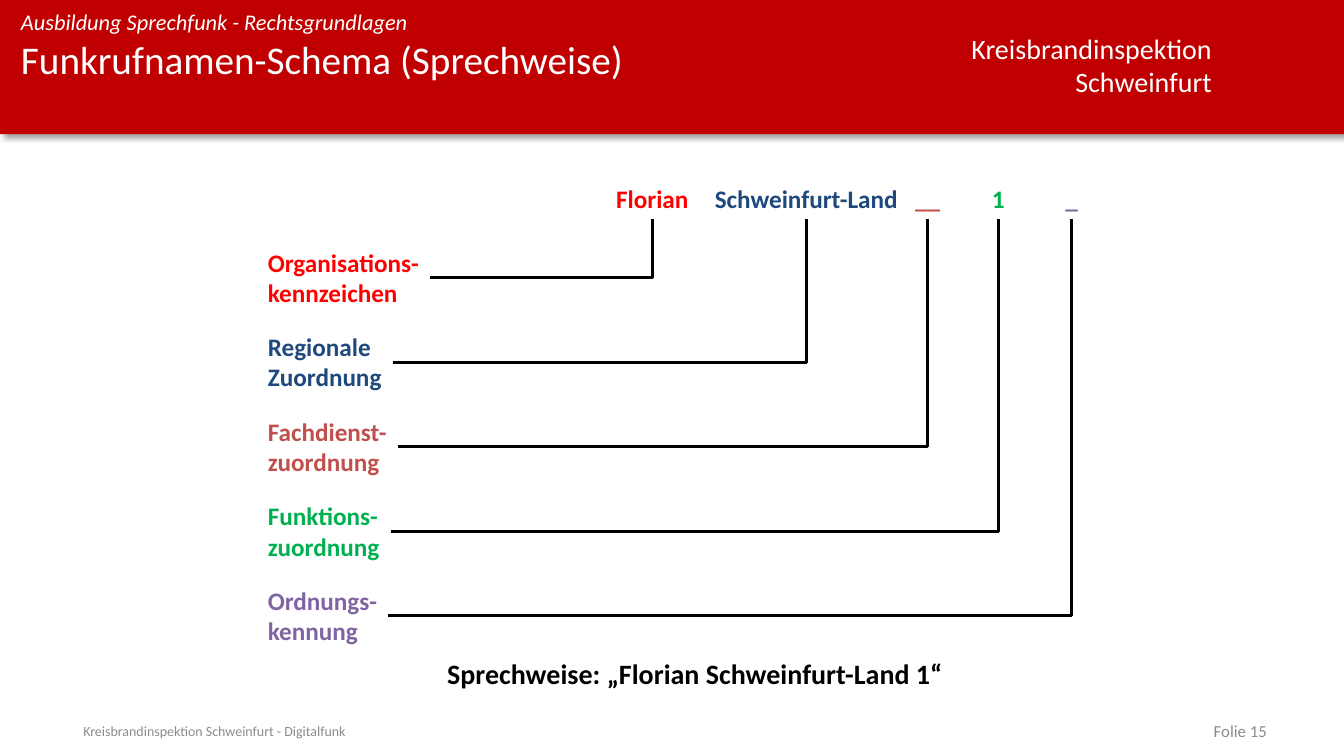
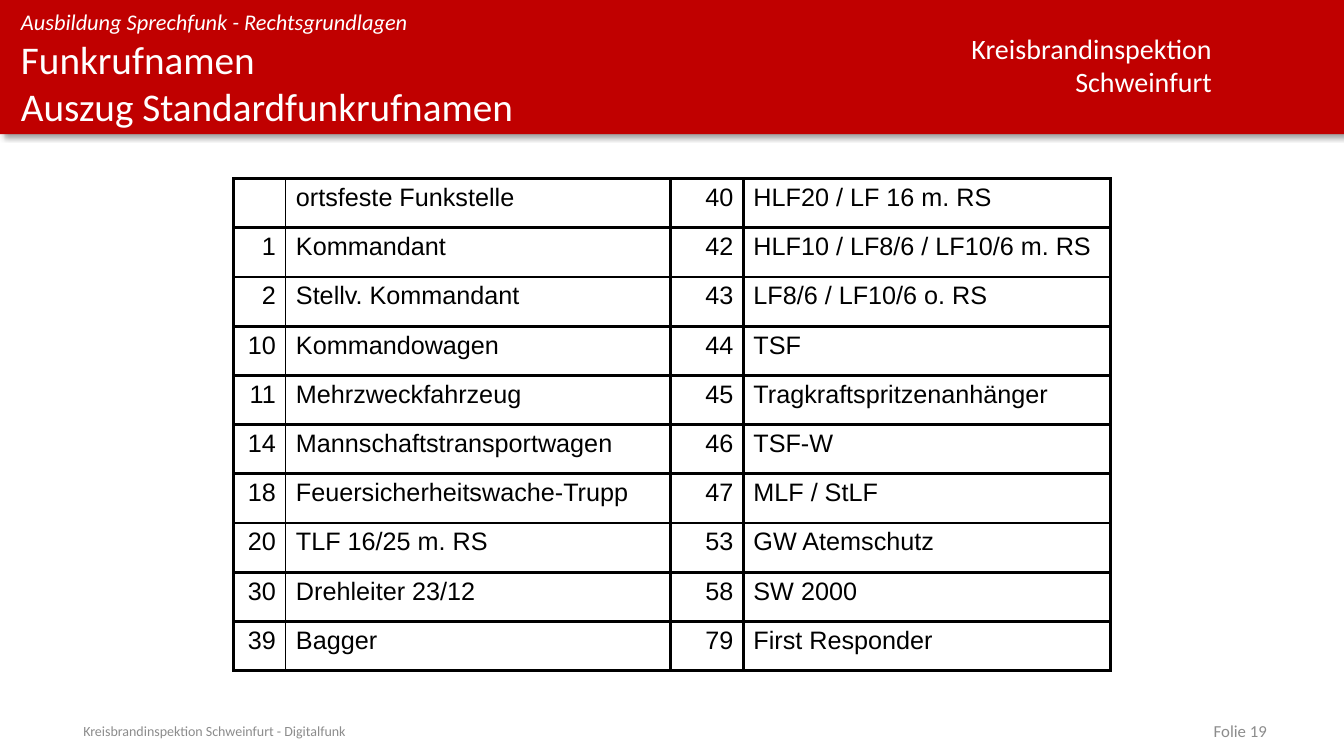
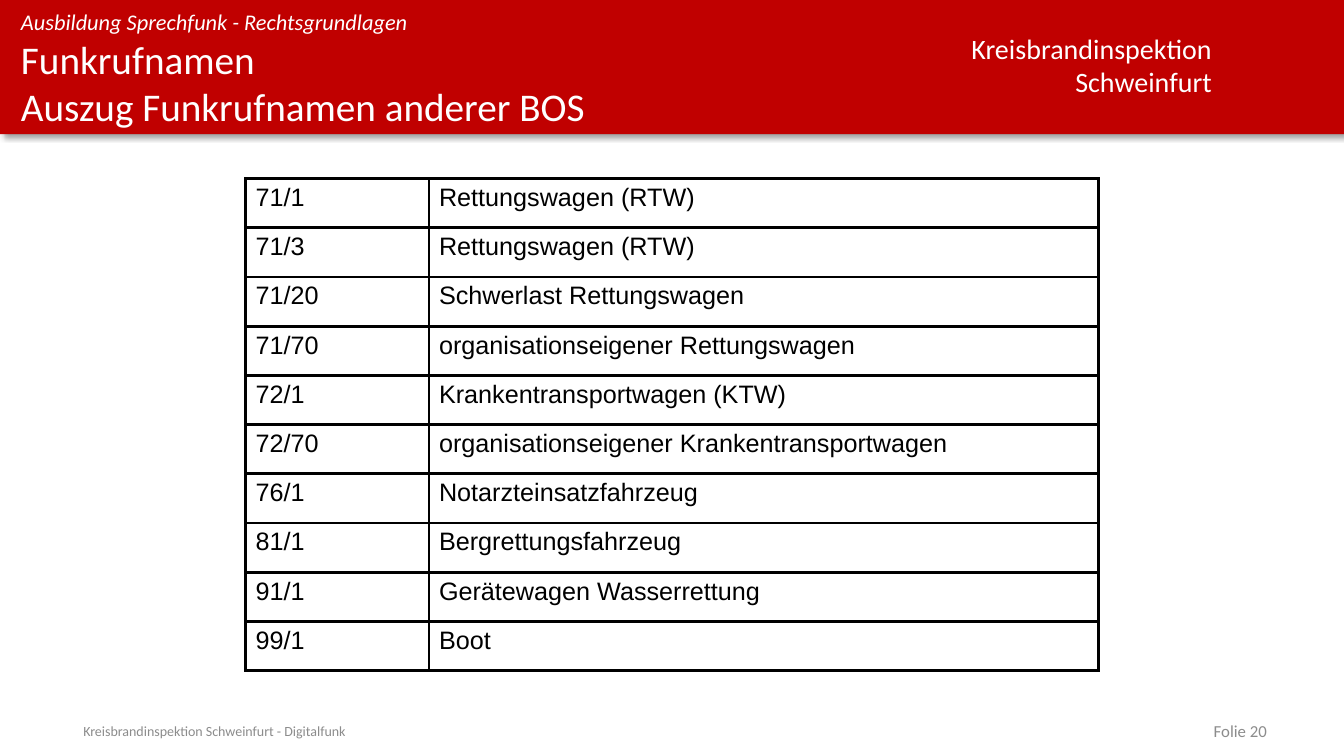
from dataclasses import dataclass

from lxml.etree import SubElement as Sub
from pptx import Presentation
from pptx.dml.color import RGBColor as RGB
from pptx.enum.shapes import MSO_CONNECTOR as Link, MSO_SHAPE as Form
from pptx.enum.text import MSO_ANCHOR as Anchor, MSO_AUTO_SIZE as Fit, PP_ALIGN as Align
from pptx.oxml.ns import qn
from pptx.util import Cm, Pt

RED = RGB(0xC0, 0x00, 0x00)
WHITE = RGB(0xFF, 0xFF, 0xFF)
BLACK = RGB(0x00, 0x00, 0x00)
GREY = RGB(0x8C, 0x8C, 0x8C)
FIRE = RGB(0xFF, 0x00, 0x00)
NAVY = RGB(0x1F, 0x49, 0x7D)
BRICK = RGB(0xC0, 0x50, 0x4D)
GREEN = RGB(0x00, 0xB0, 0x50)
PLUM = RGB(0x80, 0x64, 0xA2)

WIDE, HIGH = 33.87, 19.05
ROW = 1.24
THICK, THIN = 2.25, 1


@dataclass(frozen=True)
class Style:
    size: float
    color: RGB = BLACK
    bold: bool = False
    slant: bool = False
    face: str = "Calibri"
    align: Align = Align.LEFT


@dataclass(frozen=True)
class Box:
    left: float
    top: float
    width: float
    height: float
    wrap: bool = True
    grow: bool = False
    inset: bool = True
    anchor: Anchor = Anchor.TOP


@dataclass(frozen=True)
class Part:
    name: str
    left: float
    width: float
    label: tuple[str, ...]
    room: float
    color: RGB


@dataclass(frozen=True)
class Col:
    width: float
    align: Align = Align.LEFT
    edge: float = THICK


PARTS = [
    Part("Florian", 15.27, 2.34, ("Organisations-", "kennzeichen"), 4.34, FIRE),
    Part("Schweinfurt-Land", 17.73, 5.18, ("Regionale", "Zuordnung"), 3.4, NAVY),
    Part("__", 22.81, 1.14, ("Fachdienst-", "zuordnung"), 3.53, BRICK),
    Part("1", 24.74, 0.84, ("Funktions-", "zuordnung"), 3.35, GREEN),
    Part("_", 26.59, 0.84, ("Ordnungs-", "kennung"), 3.28, PLUM),
]

UNITS = [
    ("", "ortsfeste Funkstelle", "40", "HLF20 / LF 16 m. RS"),
    ("1", "Kommandant", "42", "HLF10 / LF8/6 / LF10/6 m. RS"),
    ("2", "Stellv. Kommandant", "43", "LF8/6 / LF10/6 o. RS"),
    ("10", "Kommandowagen", "44", "TSF"),
    ("11", "Mehrzweckfahrzeug", "45", "Tragkraftspritzenanhänger"),
    ("14", "Mannschaftstransportwagen", "46", "TSF-W"),
    ("18", "Feuersicherheitswache-Trupp", "47", "MLF / StLF"),
    ("20", "TLF 16/25 m. RS", "53", "GW Atemschutz"),
    ("30", "Drehleiter 23/12", "58", "SW 2000"),
    ("39", "Bagger", "79", "First Responder"),
]
UNIT_COLS = [Col(1.32, Align.RIGHT, THIN), Col(9.7), Col(1.83, Align.RIGHT), Col(9.25)]

OTHERS = [
    ("71/1", "Rettungswagen (RTW)"),
    ("71/3", "Rettungswagen (RTW)"),
    ("71/20", "Schwerlast Rettungswagen"),
    ("71/70", "organisationseigener Rettungswagen"),
    ("72/1", "Krankentransportwagen (KTW)"),
    ("72/70", "organisationseigener Krankentransportwagen"),
    ("76/1", "Notarzteinsatzfahrzeug"),
    ("81/1", "Bergrettungsfahrzeug"),
    ("91/1", "Gerätewagen Wasserrettung"),
    ("99/1", "Boot"),
]
OTHER_COLS = [Col(4.62, edge=THIN), Col(16.87)]


def write(frame, lines: tuple[str, ...], style: Style, breaks: bool = False) -> None:
    para = frame.paragraphs[0]
    for i, line in enumerate(lines):
        if i and breaks:
            para.add_line_break()
        elif i:
            para = frame.add_paragraph()
        para.alignment = style.align
        run = para.add_run()
        run.text = line
        font = run.font
        font.name, font.size = style.face, Pt(style.size)
        font.bold, font.italic = style.bold, style.slant
        font.color.rgb = style.color


def put(slide, box: Box, style: Style, *lines: str, breaks: bool = False):
    shape = slide.shapes.add_textbox(Cm(box.left), Cm(box.top), Cm(box.width), Cm(box.height))
    frame = shape.text_frame
    frame.word_wrap = box.wrap
    frame.auto_size = Fit.SHAPE_TO_FIT_TEXT if box.grow else Fit.NONE
    frame.vertical_anchor = box.anchor
    if not box.inset:
        frame.margin_left = frame.margin_right = frame.margin_top = frame.margin_bottom = 0
    write(frame, lines, style, breaks)
    return shape


def shade(shape) -> None:
    shape.shadow.inherit = False
    glow = Sub(shape.element.spPr.find(qn("a:effectLst")), qn("a:outerShdw"),
               blurRad=str(Pt(4)), dist=str(Pt(3)), dir="2700000", algn="tl", rotWithShape="0")
    Sub(Sub(glow, qn("a:srgbClr"), val=str(BLACK)), qn("a:alpha"), val="40000")


def start(deck, page: int, *title: str):
    slide = deck.slides.add_slide(deck.slide_layouts[6])
    band = slide.shapes.add_shape(Form.RECTANGLE, 0, 0, Cm(WIDE), Cm(3.38))
    band.fill.solid()
    band.fill.fore_color.rgb = RED
    band.line.fill.background()
    shade(band)
    put(slide, Box(24.16, 0.66, 6.63, 1.96, wrap=False, grow=True),
        Style(20, WHITE, align=Align.RIGHT), "Kreisbrandinspektion", "Schweinfurt")
    put(slide, Box(0.53, 0.2, 21.41, 0.69, grow=True, inset=False),
        Style(16, WHITE, slant=True), "Ausbildung Sprechfunk - Rechtsgrundlagen")
    put(slide, Box(0.53, 0.89, 21.41, 2.51, inset=False),
        Style(28, WHITE), *title, breaks=True)
    put(slide, Box(1.85, 18.16, 20.45, 0.51, anchor=Anchor.MIDDLE),
        Style(10, GREY), "Kreisbrandinspektion Schweinfurt - Digitalfunk")
    put(slide, Box(24.28, 18.16, 7.9, 0.51, anchor=Anchor.MIDDLE),
        Style(12, GREY, align=Align.RIGHT), f"Folie {page}")
    return slide


def join(slide, label, name) -> None:
    link = slide.shapes.add_connector(Link.ELBOW, 0, 0, 0, 0)
    link.begin_connect(label, 3)
    link.end_connect(name, 2)
    link.line.color.rgb = BLACK
    link.line.width = Pt(2)
    props = link._element.spPr
    props.find(qn("a:prstGeom")).set("prst", "bentConnector2")
    Sub(props, qn("a:effectLst"))


def scheme(slide) -> None:
    for i, part in enumerate(PARTS):
        name = put(slide, Box(part.left, 4.5, part.width, 1.02, wrap=False, grow=True,
                              anchor=Anchor.MIDDLE),
                   Style(18, part.color, bold=True, align=Align.CENTER), part.name)
        label = put(slide, Box(6.5, 6.1 + i * 2.13, part.room, 1.8, wrap=False, grow=True),
                    Style(18, part.color, bold=True), *part.label)
        join(slide, label, name)
    put(slide, Box(11.02, 16.41, 13.13, 1.12, wrap=False, grow=True),
        Style(20, bold=True), "Sprechweise: „Florian Schweinfurt-Land 1“")


def frame_cell(cell, left: float, right: float) -> None:
    cell.fill.background()
    props = cell._tc.get_or_add_tcPr()
    sides = [("L", left), ("R", right), ("T", THICK), ("B", THICK)]
    for i, (side, width) in enumerate(sides):
        line = Sub(props, qn(f"a:ln{side}"), w=str(Pt(width)))
        Sub(Sub(line, qn("a:solidFill")), qn("a:srgbClr"), val=str(BLACK))
        props.insert(i, line)


def grid(slide, cols: list[Col], rows: list[tuple[str, ...]]) -> None:
    width = sum(col.width for col in cols)
    table = slide.shapes.add_table(len(rows), len(cols), Cm((WIDE - width) / 2), Cm(4.5),
                                   Cm(width), Cm(ROW * len(rows))).table
    table.first_row = table.horz_banding = False
    for i, col in enumerate(cols):
        table.columns[i].width = Cm(col.width)
        left = cols[i - 1].edge if i else THICK
        style = Style(18, face="Arial", align=col.align)
        for j, row in enumerate(rows):
            cell = table.cell(j, i)
            frame_cell(cell, left, col.edge)
            if row[i]:
                write(cell.text_frame, (row[i],), style)
    for row in table.rows:
        row.height = Cm(ROW)


def main() -> None:
    deck = Presentation()
    deck.slide_width, deck.slide_height = Cm(WIDE), Cm(HIGH)
    scheme(start(deck, 15, "Funkrufnamen-Schema (Sprechweise)"))
    grid(start(deck, 19, "Funkrufnamen", "Auszug Standardfunkrufnamen"), UNIT_COLS, UNITS)
    grid(start(deck, 20, "Funkrufnamen", "Auszug Funkrufnamen anderer BOS"), OTHER_COLS, OTHERS)
    deck.save("out.pptx")


if __name__ == "__main__":
    main()
